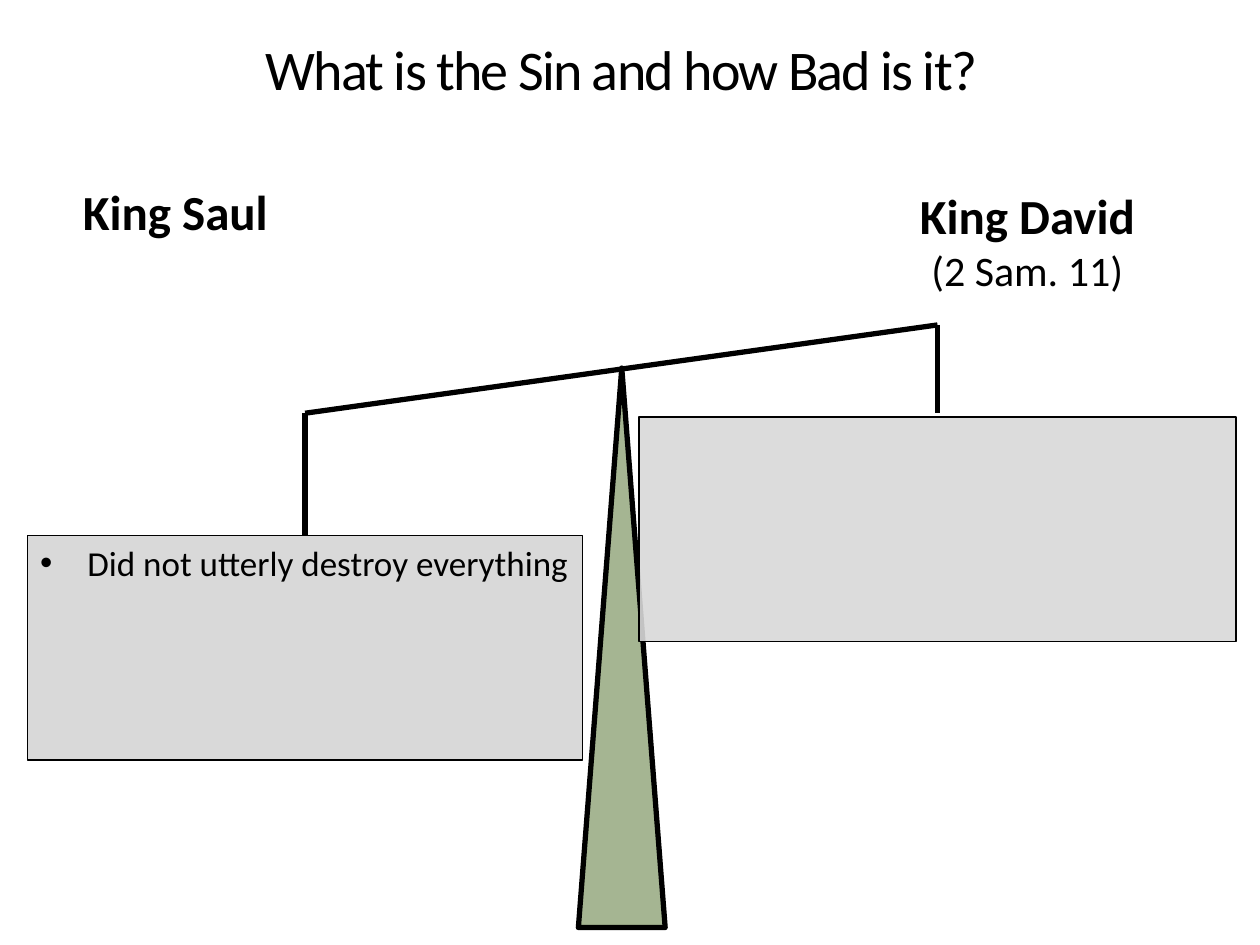
from lxml import etree
from pptx import Presentation
from pptx.dml.color import RGBColor
from pptx.enum.shapes import MSO_CONNECTOR, MSO_SHAPE
from pptx.enum.text import MSO_ANCHOR, PP_ALIGN
from pptx.oxml.ns import qn
from pptx.util import Cm, Pt

STRAIGHT = MSO_CONNECTOR.STRAIGHT
RECTANGLE, TRIANGLE = MSO_SHAPE.RECTANGLE, MSO_SHAPE.ISOSCELES_TRIANGLE
TOP, BOTTOM = MSO_ANCHOR.TOP, MSO_ANCHOR.BOTTOM
LEFT, CENTER = PP_ALIGN.LEFT, PP_ALIGN.CENTER
FONT = "Calibri"
COLORS = {"ink": "000000", "pan": "D9D9D9", "stand": "A5B592"}


def rgb(name):
    """Return the named colour."""
    return RGBColor.from_string(COLORS[name])


def add_run(p, text, size, bold=False):
    """Add one formatted run to a paragraph."""
    r = p.add_run()
    r.text = text
    r.font.name, r.font.size, r.font.bold = FONT, Pt(size), bold
    r.font.color.rgb = rgb("ink")
    return r


def add_label(s, box, lines, align=LEFT, anchor=TOP):
    """Add a text box with one paragraph per (text, size, bold) line."""
    tf = s.shapes.add_textbox(*map(Cm, box)).text_frame
    tf.word_wrap = True
    tf.vertical_anchor = anchor
    for i, line in enumerate(lines):
        p = tf.paragraphs[0] if i == 0 else tf.add_paragraph()
        p.alignment = align
        add_run(p, *line)
    return tf


def add_block(s, kind, box, color, width, opacity=100):
    """Add a filled and outlined preset shape."""
    sp = s.shapes.add_shape(kind, *map(Cm, box))
    sp.shadow.inherit = False
    sp.fill.solid()
    sp.fill.fore_color.rgb = rgb(color)
    sp.line.color.rgb = rgb("ink")
    sp.line.width = Pt(width)
    if opacity < 100:
        fill = sp.fill._xPr.find(qn("a:solidFill"))
        etree.SubElement(fill[0], qn("a:alpha"), val=str(opacity * 1000))
    return sp


def add_bar(s, start, end):
    """Add a thick straight connector."""
    c = s.shapes.add_connector(STRAIGHT, *map(Cm, start + end))
    c.line.color.rgb = rgb("ink")
    c.line.width = Pt(3)
    etree.SubElement(c._element.spPr, qn("a:effectLst"))
    return c


def add_bullet(sp, text, size):
    """Write one bulleted paragraph at the top of a shape."""
    tf = sp.text_frame
    tf.word_wrap = True
    tf.vertical_anchor = TOP
    p = tf.paragraphs[0]
    p.alignment = LEFT
    pPr = p._p.get_or_add_pPr()
    pPr.set("marL", str(Cm(0.95)))
    pPr.set("indent", str(Cm(-0.95)))
    etree.SubElement(pPr, qn("a:buFont"), typeface="Arial")
    etree.SubElement(pPr, qn("a:buChar"), char="•")
    add_run(p, text, size)


def main():
    """Build the slide with the tilted scale."""
    prs = Presentation()
    prs.slide_width, prs.slide_height = Cm(25.4), Cm(19.05)
    s = prs.slides.add_slide(prs.slide_layouts[6])

    add_label(s, (1.42, 3.53, 5, 1.45), [("King Saul", 28, True)])
    title = add_label(s, (0.61, 0.48, 23.83, 1.7),
                      [("What is the Sin and how Bad is it?", 32)], CENTER, BOTTOM)
    title.paragraphs[0].runs[0].font._element.set("spc", "-100")
    add_label(s, (18.21, 3.61, 5, 2.49),
              [("King David", 28, True), ("(2 Sam. 11)", 24)], CENTER)

    saul_end, david_end = (6.15, 8.33), (18.9, 6.55)
    add_block(s, TRIANGLE, (11.66, 7.42, 1.75, 11.28), "stand", 3)
    add_bar(s, saul_end, david_end)

    saul_hanger = add_bar(s, saul_end, (6.15, 10.8))
    saul_pan = add_block(s, RECTANGLE, (0.56, 10.8, 11.18, 4.52), "pan", 0.75)
    saul_hanger.end_connect(saul_pan, 0)
    add_bullet(saul_pan, "Did not utterly destroy everything", 20)

    add_bar(s, david_end, (18.9, 8.33))
    add_block(s, RECTANGLE, (12.88, 8.41, 12.04, 4.52), "pan", 0.75, opacity=90)

    prs.save("out.pptx")


if __name__ == "__main__":
    main()
